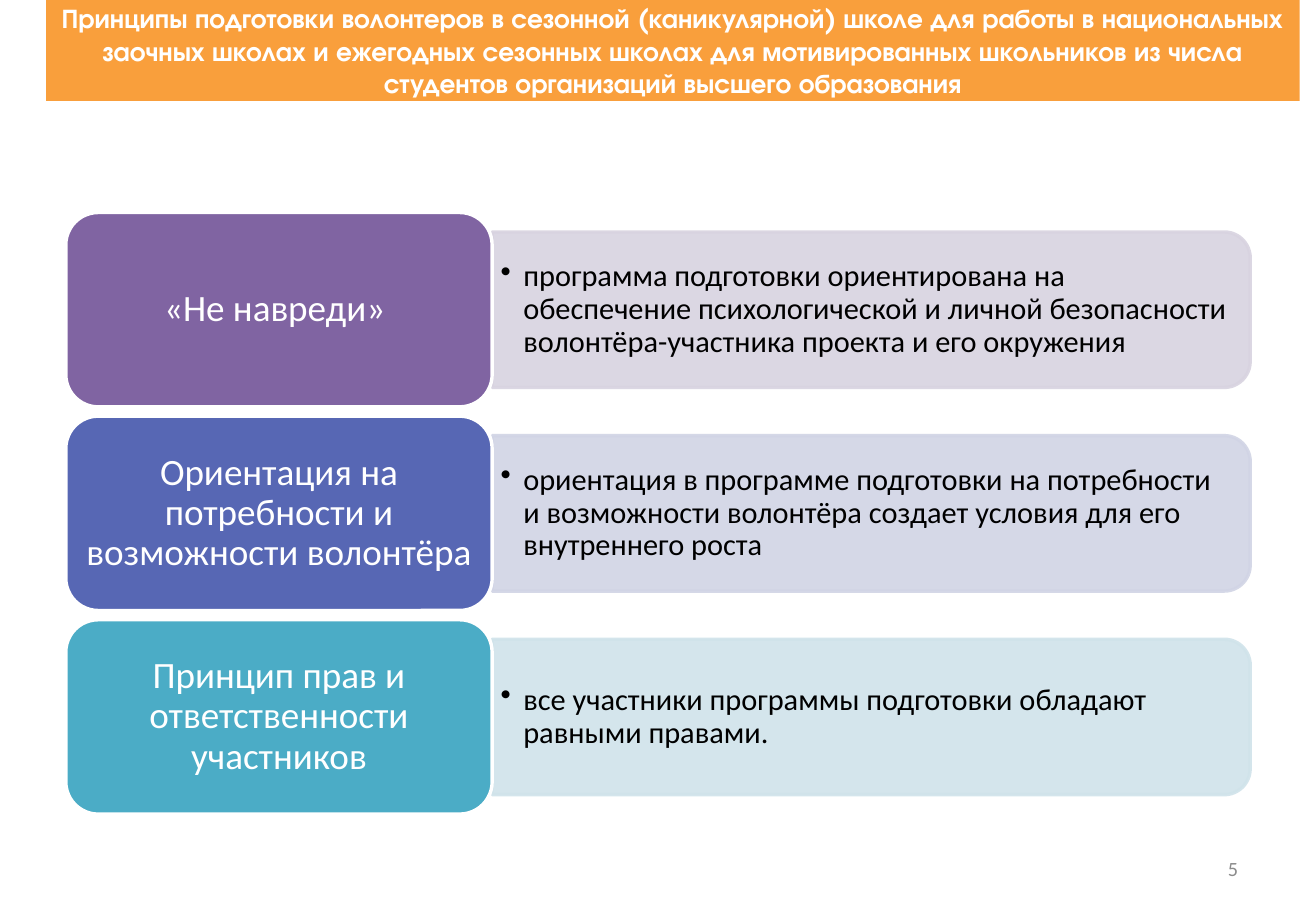
from lxml.etree import SubElement as Sub
from pptx import Presentation
from pptx.dml.color import RGBColor as Rgb
from pptx.enum.shapes import MSO_SHAPE as Kind
from pptx.enum.text import MSO_ANCHOR as Anchor, PP_ALIGN as Align
from pptx.oxml.ns import qn
from pptx.util import Pt

HEX = {
    "band": "F99F3C", "white": "FFFFFF", "black": "000000", "gray": "8C8C8C",
    "plum": "8064A2", "lilac": "D8D3E0", "blue": "5767B4", "pale": "D1D4E5",
    "teal": "4BACC6", "mist": "D0E3EA",
}

TITLE = (
    "Принципы подготовки волонтеров в сезонной (каникулярной) школе для работы "
    "в национальных заочных школах и ежегодных сезонных школах для "
    "мотивированных школьников из числа студентов организаций высшего образования"
)

ROWS = [
    ("«Не навреди» ",
     "программа подготовки ориентирована на обеспечение психологической и "
     "личной безопасности волонтёра-участника проекта и его окружения",
     "plum", "lilac"),
    ("Ориентация на потребности и возможности волонтёра ",
     "ориентация в программе подготовки на потребности и возможности "
     "волонтёра создает условия для его внутреннего роста",
     "blue", "pale"),
    ("Принцип прав и ответственности участников",
     "все участники программы подготовки обладают равными правами.",
     "teal", "mist"),
]


def add_form(slide, kind, box, fill, edge=None):
    """Add a flat preset shape with an optional 2 pt edge."""
    form = slide.shapes.add_shape(kind, *map(Pt, box))
    form.shadow.inherit = False
    form.fill.solid()
    form.fill.fore_color.rgb = Rgb.from_string(HEX[fill])
    if edge:
        form.line.color.rgb = Rgb.from_string(HEX[edge])
        form.line.width = Pt(2)
    else:
        form.line.fill.background()
    return form


def set_text(form, text, size, color, align, pad=(7.2, 3.6), gap=1.0,
             face="Calibri", bold=False):
    """Write one wrapped, vertically centred paragraph."""
    frame = form.text_frame
    frame.text = text
    frame.word_wrap = True
    frame.vertical_anchor = Anchor.MIDDLE
    frame.margin_left = frame.margin_right = Pt(pad[0])
    frame.margin_top = frame.margin_bottom = Pt(pad[1])
    para = frame.paragraphs[0]
    para.alignment = align
    para.line_spacing = gap
    font = para.runs[0].font
    font.name, font.size, font.bold = face, Pt(size), bold
    font.color.rgb = Rgb.from_string(HEX[color])
    return para


def fade(form):
    """Make the fill and edge of a shape 90 percent opaque."""
    for tint in form._element.spPr.iter(qn("a:srgbClr")):
        Sub(tint, qn("a:alpha"), val="90000")


def add_bullet(para, hang):
    """Give a paragraph a round bullet and a hanging indent."""
    props = para._p.get_or_add_pPr()
    props.set("marL", str(Pt(hang)))
    props.set("indent", str(-Pt(hang)))
    Sub(props, qn("a:buChar"), char="•")


def draw_head(slide, box):
    """Draw the title band."""
    band = add_form(slide, Kind.RECTANGLE, box, "band")
    set_text(band, TITLE, 16, "white", Align.CENTER,
             face="TeX Gyre Adventor", bold=True)


def draw_row(slide, box, row):
    """Draw one principle: a label and the panel to its right."""
    x, y, wide, high = box
    name, note, dark, light = row
    side = 252.7
    long, thick = wide - side, high * 0.8
    mid = y + high / 2
    turn = (x + side + (long - thick) / 2, mid - long / 2, thick, long)
    panel = add_form(slide, Kind.ROUND_2_SAME_RECTANGLE, turn, light, light)
    panel.rotation = 90
    fade(panel)

    tall = 83
    area = (x + side, mid - tall / 2, long - 4.5, tall)
    body = slide.shapes.add_textbox(*map(Pt, area))
    para = set_text(body, note, 18, "black", Align.LEFT, (5, 2.9), 0.9)
    add_bullet(para, 13.5)

    label = add_form(slide, Kind.ROUNDED_RECTANGLE, (x, y, side, high),
                     dark, "white")
    set_text(label, name, 22, "white", Align.CENTER, (6.6, 3.3), 0.9)


def draw_list(slide, box):
    """Stack the principles at an even pitch inside the box."""
    x, y, wide, high = box
    tall = 115.2
    step = (high - tall) / (len(ROWS) - 1)
    for i, row in enumerate(ROWS):
        draw_row(slide, (x, y + i * step, wide, tall), row)


def draw_foot(slide, box):
    """Draw the page number."""
    foot = slide.shapes.add_textbox(*map(Pt, box))
    set_text(foot, "5", 12, "gray", Align.RIGHT)


def main():
    """Build the slide and save it."""
    deck = Presentation()
    deck.slide_width, deck.slide_height = Pt(780), Pt(540)
    slide = deck.slides.add_slide(deck.slide_layouts[6])
    draw_head(slide, (27.4, 0, 743, 59.8))
    draw_foot(slide, (558.7, 500.4, 182.2, 28.8))
    draw_list(slide, (39, 126, 702, 356.6))
    deck.save("out.pptx")


if __name__ == "__main__":
    main()
